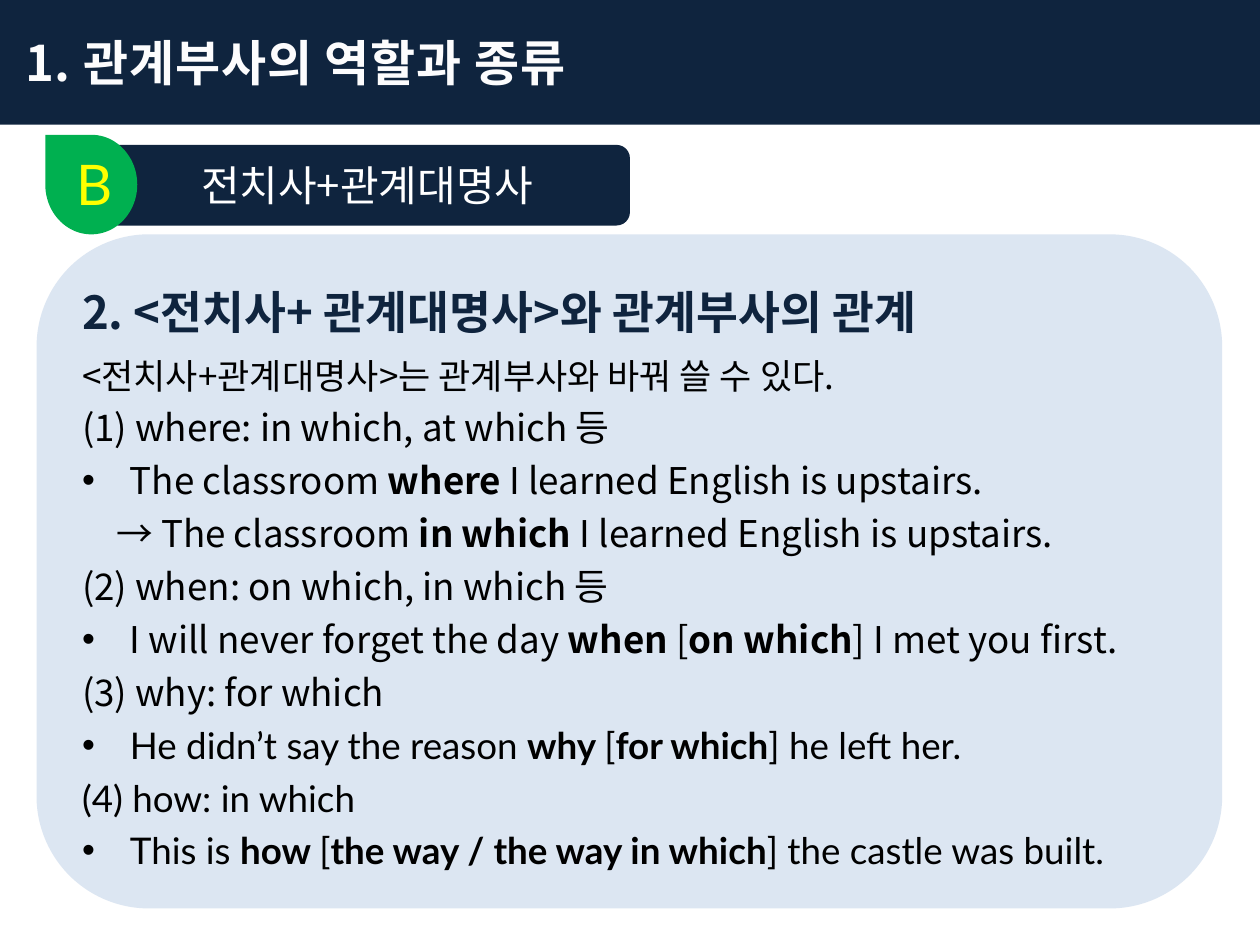
import pptx
import pptx.util
import pptx.dml.color
import pptx.enum.shapes
import pptx.enum.text
import pptx.oxml
import pptx.oxml.ns
from dataclasses import dataclass
from pptx.util import Inches

SHAPE = pptx.enum.shapes.MSO_SHAPE
ALIGN = pptx.enum.text.PP_ALIGN
ANCHOR = pptx.enum.text.MSO_ANCHOR
FIT = pptx.enum.text.MSO_AUTO_SIZE


@dataclass(frozen=True)
class Theme:
    navy: str = "0F243E"
    panel: str = "DCE6F2"
    green: str = "00B050"
    yellow: str = "FFFF00"
    white: str = "FFFFFF"
    pale: str = "FCFCFD"
    black: str = "000000"
    korean: str = "Noto Sans CJK KR"
    latin: str = "Lato"
    title: int = 28
    head: int = 26
    note: int = 20
    body: int = 21
    label: int = 24
    badge: int = 32


THEME = Theme()

# Kind of line, font, text; asterisks enclose bold words.
LINES = [
    ("head", THEME.korean, "*2. <전치사+ 관계대명사>와 관계부사의 관계*"),
    ("note", THEME.korean, "<전치사+관계대명사>는 관계부사와 바꿔 쓸 수 있다."),
    ("plain", THEME.korean, "(1) where: in which, at which 등"),
    ("bullet", THEME.korean, "The classroom *where* I learned English is upstairs."),
    ("arrow", THEME.korean, "→ The classroom *in which *I learned English is upstairs."),
    ("plain", THEME.korean, "(2) when: on which, in which 등"),
    ("bullet", THEME.korean, "I will never forget the day *when *[*on which*] I met you first."),
    ("plain", THEME.korean, "(3) why: for which"),
    ("bullet", THEME.latin, "He didn’t say the reason *why *[*for which*] he left her."),
    ("plain", THEME.latin, "(4) how: in which"),
    ("bullet", THEME.latin, "This is *how *[*the way / the way in which*] the castle was built."),
]


def color(code):
    return pptx.dml.color.RGBColor.from_string(code)


def style(run, size, code, face, bold=False):
    font = run.font
    font.size = pptx.util.Pt(size)
    font.bold = bold
    font.color.rgb = color(code)
    font.name = face
    east = pptx.oxml.parse_xml(
        f'<a:ea {pptx.oxml.ns.nsdecls("a")} typeface="{face}"/>')
    font._element.find(pptx.oxml.ns.qn("a:latin")).addnext(east)


def paint(shape, code):
    shape.fill.solid()
    shape.fill.fore_color.rgb = color(code)
    shape.line.fill.background()


def place(shape, left, top, width, height):
    shape.left, shape.top = Inches(left), Inches(top)
    shape.width, shape.height = Inches(width), Inches(height)


def add_block(slide, kind, box, code):
    shape = slide.shapes.add_shape(kind, *map(Inches, box))
    shape.shadow.inherit = False
    paint(shape, code)
    return shape


def set_line(shape, text, align, *look):
    para = shape.text_frame.paragraphs[0]
    para.text = text
    para.alignment = align
    style(para.runs[0], *look)
    return para.runs[0]


def set_indent(para, left, hang=0, mark=None):
    """Set the left margin, the hanging indent and the bullet."""
    props = para._p.get_or_add_pPr()
    props.set("marL", str(Inches(left)))
    props.set("indent", str(-Inches(hang)))
    names = pptx.oxml.ns.nsdecls("a")
    if mark:
        props.append(pptx.oxml.parse_xml(f'<a:buFont {names} typeface="Arial"/>'))
        props.append(pptx.oxml.parse_xml(f'<a:buChar {names} char="{mark}"/>'))
    else:
        props.append(pptx.oxml.parse_xml(f"<a:buNone {names}/>"))


def fill_para(para, kind, face, text):
    para.alignment = ALIGN.JUSTIFY
    para.line_spacing = 1.2
    para.space_before = pptx.util.Pt(4 if kind == "note" else 0)
    if kind == "bullet":
        set_indent(para, 0.38, 0.38, "•")
    else:
        set_indent(para, 0.27 if kind == "arrow" else 0)
    size = {"head": THEME.head, "note": THEME.note}.get(kind, THEME.body)
    code = THEME.navy if kind == "head" else THEME.black
    for i, part in enumerate(text.split("*")):
        if part:
            run = para.add_run()
            run.text = part
            style(run, size, code, face, i % 2 == 1)


def set_title(title):
    place(title, 0, 0, 10, 0.99)
    paint(title, THEME.navy)
    frame = title.text_frame
    frame.auto_size = FIT.NONE
    frame.vertical_anchor = ANCHOR.MIDDLE
    frame.margin_left = Inches(0.2)
    run = set_line(title, "1. 관계부사의 역할과 종류", ALIGN.LEFT,
                   THEME.title, THEME.pale, THEME.korean, True)
    run.font._element.set("spc", "50")


def set_body(body):
    """Turn the body placeholder into a rounded panel with the lesson."""
    place(body, 0.29, 1.86, 9.41, 5.35)
    body._element.spPr.append(pptx.oxml.parse_xml(
        f'<a:prstGeom {pptx.oxml.ns.nsdecls("a")} '
        'prst="flowChartAlternateProcess"><a:avLst/></a:prstGeom>'))
    paint(body, THEME.panel)
    frame = body.text_frame
    frame.auto_size = FIT.NONE
    frame.vertical_anchor = ANCHOR.TOP
    for i, line in enumerate(LINES):
        para = frame.add_paragraph() if i else frame.paragraphs[0]
        fill_para(para, *line)


def add_label(slide):
    label = add_block(slide, SHAPE.FLOWCHART_ALTERNATE_PROCESS,
                      (0.83, 1.15, 4.17, 0.64), THEME.navy)
    label.text_frame.vertical_anchor = ANCHOR.MIDDLE
    set_line(label, "전치사+관계대명사", ALIGN.CENTER,
             THEME.label, THEME.white, THEME.korean)


def add_badge(slide):
    drop = add_block(slide, SHAPE.TEAR, (0.33, 1.1, 0.79, 0.73), THEME.green)
    drop.rotation = 270
    letter = slide.shapes.add_textbox(*map(Inches, (0.51, 1.14, 0.47, 0.64)))
    letter.text_frame.word_wrap = True
    letter.text_frame.auto_size = FIT.SHAPE_TO_FIT_TEXT
    set_line(letter, "B", ALIGN.LEFT, THEME.badge, THEME.yellow, THEME.latin)


def main():
    deck = pptx.Presentation()
    deck.slide_width, deck.slide_height = Inches(10), Inches(7.5)
    slide = deck.slides.add_slide(deck.slide_layouts[1])
    set_title(slide.shapes.title)
    set_body(slide.placeholders[1])
    add_label(slide)
    add_badge(slide)
    deck.save("out.pptx")


if __name__ == "__main__":
    main()
